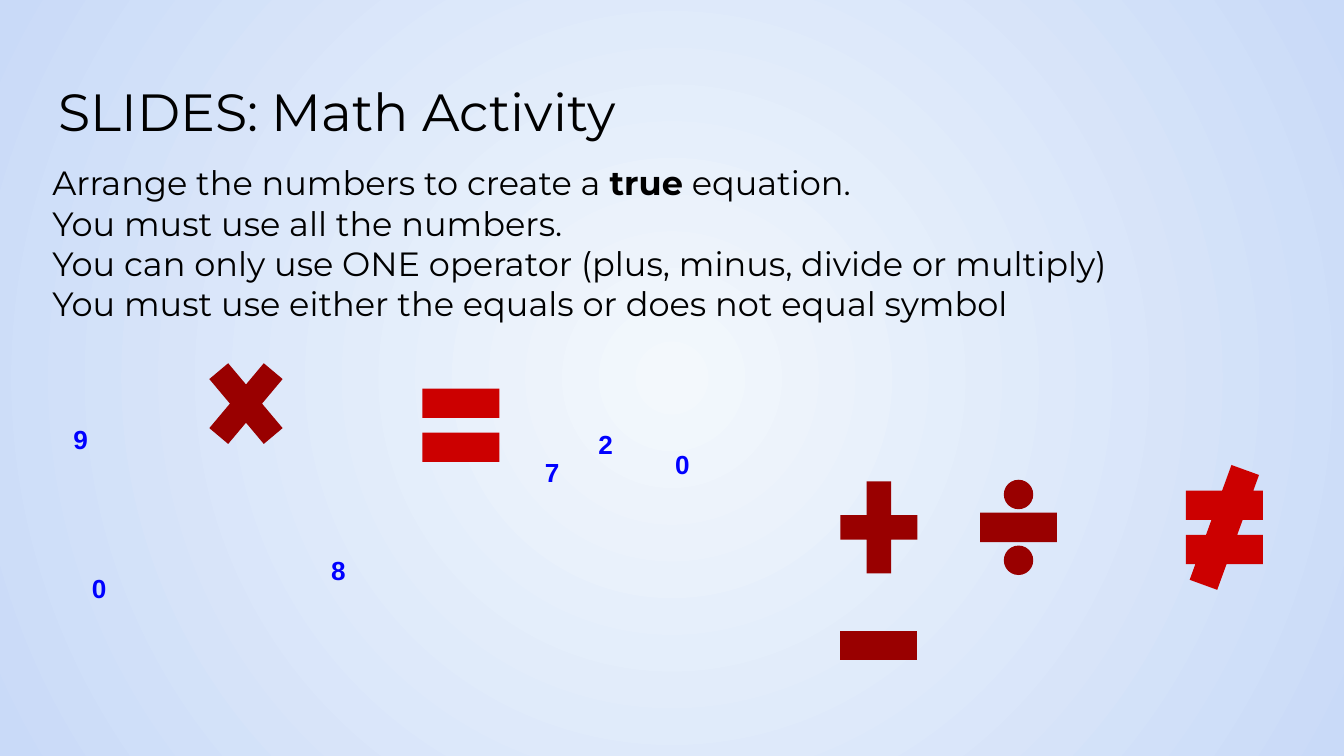
"""Build the math activity slide with movable numbers and operators."""
from lxml.etree import SubElement
from pptx import Presentation
from pptx.dml.color import RGBColor
from pptx.enum.shapes import MSO_SHAPE
from pptx.enum.text import MSO_ANCHOR, MSO_AUTO_SIZE, PP_ALIGN
from pptx.oxml.ns import qn
from pptx.util import Cm, Pt

OPERATOR, RELATION = "990000", "CC0000"

NUMBERS = [
    ("9", 1, 7.87),
    ("8", 5.87, 10.36),
    ("7", 9.91, 8.51),
    ("2", 10.92, 7.98),
    ("0", 12.37, 8.36),
    ("0", 1.35, 10.69),
]

SYMBOLS = [
    (MSO_SHAPE.MATH_PLUS, 15.62, 8.79, OPERATOR, [0.235]),
    (MSO_SHAPE.MATH_MINUS, 15.62, 11.02, OPERATOR, [0.235]),
    (MSO_SHAPE.MATH_DIVIDE, 18.26, 8.79, OPERATOR, [0.235, 0.059, 0.118]),
    (MSO_SHAPE.MATH_MULTIPLY, 3.66, 6.45, OPERATOR, [0.235]),
    (MSO_SHAPE.MATH_NOT_EQUAL, 22.15, 8.79, RELATION, [0.235, 66, 0.118]),
    (MSO_SHAPE.MATH_EQUAL, 7.72, 6.86, RELATION, [0.235, 0.118]),
]

INSTRUCTIONS = [
    ["Arrange the numbers to create a ", "true", " equation."],
    ["You must use all the numbers."],
    ["You can only use ONE operator (plus, minus, divide or multiply)"],
    ["You must use either the equals or does not equal symbol"],
]


def rgb(value):
    return RGBColor.from_string(value)


class SlideBuilder:
    font, number_font = "Montserrat", "Arial"
    ink, number_color = "000000", "0000FF"
    inset = Cm(0.25)

    def __init__(self, s):
        self.s = s

    def background(self, center, edge):
        fill = self.s.background.fill
        fill.gradient()
        for stop, color in zip(fill.gradient_stops, (center, edge)):
            stop.color.rgb = rgb(color)
        lin = next(self.s.element.iter(qn("a:lin")))
        grad = lin.getparent()
        grad.remove(lin)
        path = SubElement(grad, qn("a:path"), path="circle")
        sides = dict.fromkeys("ltrb", "50000")
        SubElement(path, qn("a:fillToRect"), sides)

    def frame(self, sp):
        tf = sp.text_frame
        tf.word_wrap = True
        tf.auto_size = MSO_AUTO_SIZE.NONE
        tf.vertical_anchor = MSO_ANCHOR.TOP
        return tf

    def style(self, p, size, font, color, bold=False, align=PP_ALIGN.LEFT):
        p.alignment = align
        for r in p.runs:
            r.font.name, r.font.size, r.font.bold = font, Pt(size), bold
            r.font.color.rgb = rgb(color)

    def pad(self, tf):
        tf.margin_left = tf.margin_right = self.inset
        tf.margin_top = tf.margin_bottom = self.inset

    def title(self, text, x, y, w, h):
        sp = self.s.shapes.title
        sp.left, sp.top, sp.width, sp.height = Cm(x), Cm(y), Cm(w), Cm(h)
        tf = self.frame(sp)
        self.pad(tf)
        tf.text = text
        self.style(tf.paragraphs[0], 28, self.font, self.ink)

    def instructions(self, lines, x, y, w, h):
        sp = self.s.shapes.add_textbox(Cm(x), Cm(y), Cm(w), Cm(h))
        tf = self.frame(sp)
        self.pad(tf)
        for i, parts in enumerate(lines):
            p = tf.add_paragraph() if i else tf.paragraphs[0]
            for part in parts:
                p.add_run().text = part
            self.style(p, 18, self.font, self.ink)
            for r in p.runs[1:2]:
                r.font.bold = True

    def number(self, text, x, y):
        sp = self.s.shapes.add_textbox(Cm(x), Cm(y), Cm(1.05), Cm(2.49))
        tf = self.frame(sp)
        tf.text = text
        self.style(tf.paragraphs[0], 14, self.number_font, self.number_color,
                   True, PP_ALIGN.CENTER)

    def symbol(self, kind, x, y, color, adjustments):
        sp = self.s.shapes.add_shape(kind, Cm(x), Cm(y), Cm(1.98), Cm(2.36))
        sp.shadow.inherit = False
        sp.fill.solid()
        sp.fill.fore_color.rgb = rgb(color)
        sp.line.fill.background()
        for i, value in enumerate(adjustments):
            sp.adjustments[i] = value


def main():
    prs = Presentation()
    prs.slide_width, prs.slide_height = Cm(25.4), Cm(14.29)
    slide = SlideBuilder(prs.slides.add_slide(prs.slide_layouts[5]))
    slide.background("F3F8FC", "C9DAF8")
    slide.title("SLIDES: Math Activity", 0.86, 1.24, 18.77, 1.6)
    for number in NUMBERS:
        slide.number(*number)
    for symbol in SYMBOLS:
        slide.symbol(*symbol)
    slide.instructions(INSTRUCTIONS, 0.74, 2.82, 21.41, 3.73)
    prs.save("out.pptx")


if __name__ == "__main__":
    main()
